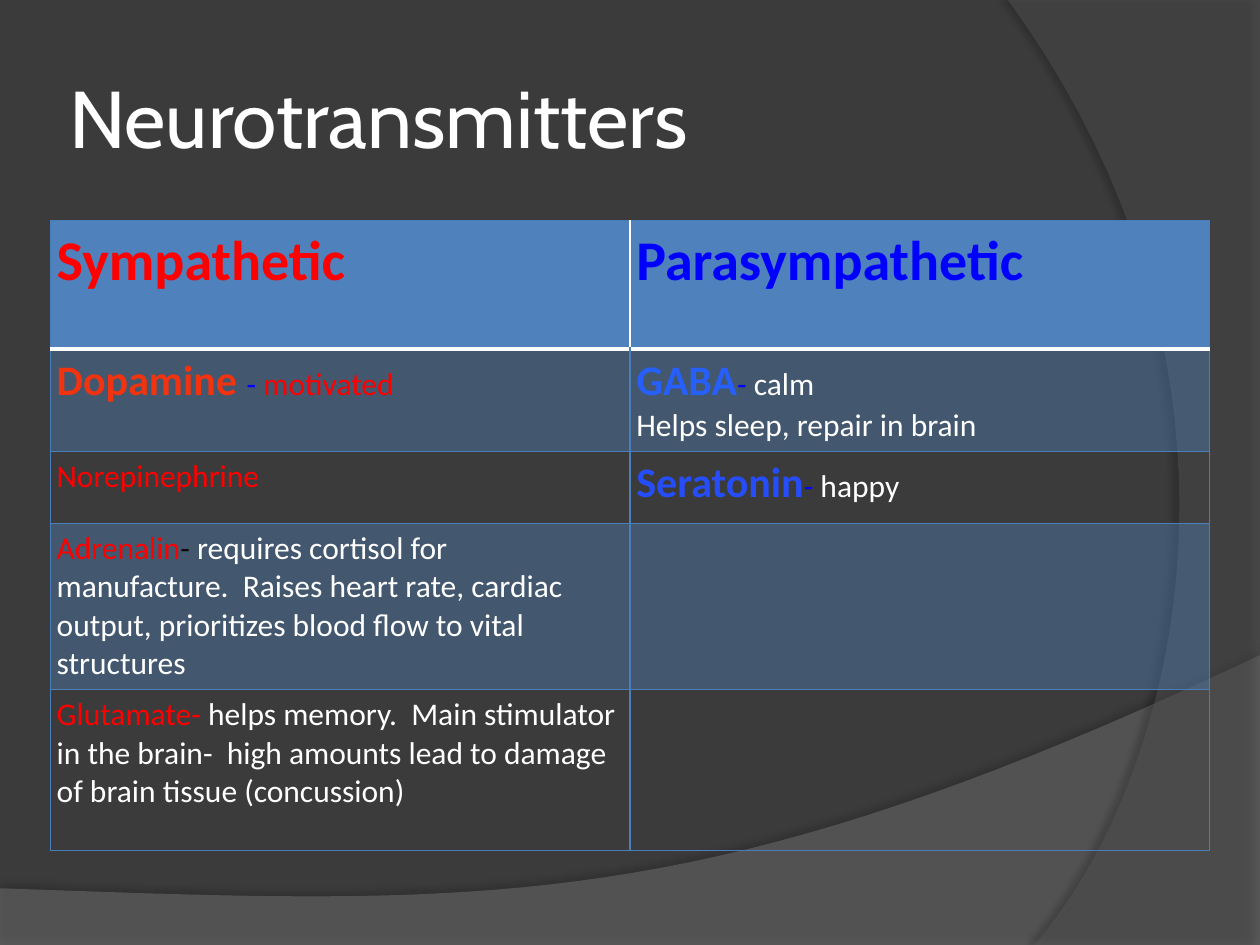
from dataclasses import dataclass

from lxml.etree import SubElement
from pptx import Presentation
from pptx.dml.color import RGBColor
from pptx.enum.text import MSO_ANCHOR, PP_ALIGN
from pptx.oxml.ns import qn
from pptx.util import Inches, Pt


@dataclass(frozen=True)
class Theme:
    background: str = "3B3B3B"
    wave: str = "7B7B7B"
    arc: str = "5A5A5A"
    shadow: str = "000000"
    white: str = "FFFFFF"
    accent: str = "4F81BD"
    border: str = "4A7EBB"
    red: str = "FF0000"
    blue: str = "0000FF"
    dark: str = "0D0D0D"
    dopamine: str = "F13310"
    gaba: str = "275FFA"
    seratonin: str = "264DFA"
    title_font: str = "Cabin"
    body_font: str = "Calibri"
    title_size: int = 46
    header_size: int = 32
    key_size: int = 24
    body_size: int = 18
    band_alpha: int = 40
    thin: float = 0.75
    thick: float = 2


THEME = Theme()
MARGIN = Inches(0.05)


def header(text, color):
    return text, color, THEME.header_size, True


def key(text, color):
    return text, color, THEME.key_size, True


def body(text, color=THEME.white):
    return text, color, THEME.body_size, False


ROWS = [
    (1.02, [[header("Sympathetic", THEME.red)]],
     [[header("Parasympathetic", THEME.blue)]]),
    (0.8, [[key("Dopamine ", THEME.dopamine), body("- ", THEME.blue),
            body("motivated", THEME.red)]],
     [[key("GABA", THEME.gaba), body("-", THEME.blue), body(" calm")],
      [body("Helps sleep, repair in brain")]]),
    (0.57, [[body("Norepinephrine", THEME.red)]],
     [[key("Seratonin", THEME.seratonin), body("-", THEME.blue), body(" happy")]]),
    (1.28, [[body("Adrenalin", THEME.red), body("- ", THEME.dark),
             body("requires cortisol for manufacture.  Raises heart rate, cardiac "
                  "output, prioritizes blood flow to vital structures")]], []),
    (1.28, [[body("Glutamate- ", THEME.red),
             body("helps memory.  Main stimulator in the brain-  high amounts "
                  "lead to damage of brain tissue (concussion)")]], []),
]


def set_fill(fill, color, alpha=100):
    fill.solid()
    fill.fore_color.rgb = RGBColor.from_string(color)
    if alpha < 100:
        color_element = fill._xPr.find(qn("a:solidFill"))[0]
        SubElement(color_element, qn("a:alpha"), val=str(alpha * 1000))


def bezier(points, steps=40):
    for step in range(1, steps + 1):
        t = step / steps
        weights = ((1 - t) ** 3, 3 * t * (1 - t) ** 2, 3 * t * t * (1 - t), t ** 3)
        yield tuple(sum(weight * point[axis] for weight, point in zip(weights, points))
                    for axis in (0, 1))


def add_swoosh(slide, corners, controls, end, color, alpha, shadow):
    points = [*corners, *bezier([corners[-1], *controls, end])]
    points = [(Inches(x), Inches(y)) for x, y in points]
    builder = slide.shapes.build_freeform(*points[0])
    builder.add_line_segments(points[1:])
    shape = builder.convert_to_shape()
    set_fill(shape.fill, color, alpha)
    shape.line.fill.background()
    shape.shadow.inherit = False
    shadow_alpha, distance, direction = shadow
    effects = shape._element.spPr.find(qn("a:effectLst"))
    outer = SubElement(effects, qn("a:outerShdw"), blurRad=str(Pt(4)),
                       dist=str(Pt(distance)), dir=str(direction * 60000),
                       algn="ctr", rotWithShape="0")
    shadow_color = SubElement(outer, qn("a:srgbClr"), val=THEME.shadow)
    SubElement(shadow_color, qn("a:alpha"), val=str(shadow_alpha * 1000))


def add_backdrop(slide, width, height):
    set_fill(slide.background.fill, THEME.background)
    add_swoosh(slide, [(0, 7.05), (0, height), (width, height), (width, 5.2)],
               [(5.59, 7.29), (3.91, 7.19)], (0, 7.05),
               THEME.wave, 45, (35, 3.5, 270))
    add_swoosh(slide, [(width, 0), (width, height), (8.21, height)],
               [(9.35, 6.19), (10.18, 3)], (8, 0),
               THEME.arc, 40, (45, 4, 180))


def set_margins(target):
    target.margin_left = target.margin_right = MARGIN
    target.margin_top = target.margin_bottom = MARGIN


def add_title(slide, text, left, top, width, height):
    title = slide.shapes.title
    title.left, title.top = Inches(left), Inches(top)
    title.width, title.height = Inches(width), Inches(height)
    frame = title.text_frame
    frame.text = text
    frame.vertical_anchor = MSO_ANCHOR.MIDDLE
    set_margins(frame)
    paragraph = frame.paragraphs[0]
    paragraph.alignment = PP_ALIGN.LEFT
    paragraph.font.name = THEME.title_font
    paragraph.font.size = Pt(THEME.title_size)
    paragraph.font.color.rgb = RGBColor.from_string(THEME.white)
    slide.shapes._spTree.append(title._element)


def write_cell(cell, lines):
    set_margins(cell)
    frame = cell.text_frame
    for index, line in enumerate(lines):
        paragraph = frame.add_paragraph() if index else frame.paragraphs[0]
        paragraph.font.name = THEME.body_font
        for text, color, size, bold in line:
            run = paragraph.add_run()
            run.text = text
            run.font.name = THEME.body_font
            run.font.size = Pt(size)
            run.font.bold = bold
            run.font.color.rgb = RGBColor.from_string(color)


def set_borders(cell, row, column):
    borders = {side: (THEME.border, THEME.thin) for side in "LRTB"}
    if row == 0:
        borders["B"] = (THEME.white, THEME.thick)
        borders["L" if column else "R"] = (THEME.white, THEME.thin)
    elif row == 1:
        borders["T"] = (THEME.white, THEME.thick)
    properties = cell._tc.get_or_add_tcPr()
    for index, (side, (color, width)) in enumerate(borders.items()):
        line = SubElement(properties, qn(f"a:ln{side}"), w=str(Pt(width)))
        fill = SubElement(line, qn("a:solidFill"))
        SubElement(fill, qn("a:srgbClr"), val=color)
        properties.insert(index, line)


def add_comparison(slide, left, top, width):
    height = sum(row[0] for row in ROWS)
    table = slide.shapes.add_table(len(ROWS), 2, Inches(left), Inches(top),
                                   Inches(width), Inches(height)).table
    table.first_row = table.horz_banding = False
    for row, (row_height, *cells) in enumerate(ROWS):
        table.rows[row].height = Inches(row_height)
        for column, lines in enumerate(cells):
            cell = table.cell(row, column)
            write_cell(cell, lines)
            if row == 0:
                set_fill(cell.fill, THEME.accent)
            elif row % 2:
                set_fill(cell.fill, THEME.accent, THEME.band_alpha)
            else:
                cell.fill.background()
            set_borders(cell, row, column)


def main():
    presentation = Presentation()
    presentation.slide_width, presentation.slide_height = Inches(10), Inches(7.5)
    slide = presentation.slides.add_slide(presentation.slide_layouts[5])
    add_backdrop(slide, 10, 7.5)
    add_title(slide, "Neurotransmitters", 0.5, 0.3, 8.17, 1.25)
    add_comparison(slide, 0.4, 1.75, 9.2)
    presentation.save("out.pptx")


if __name__ == "__main__":
    main()
